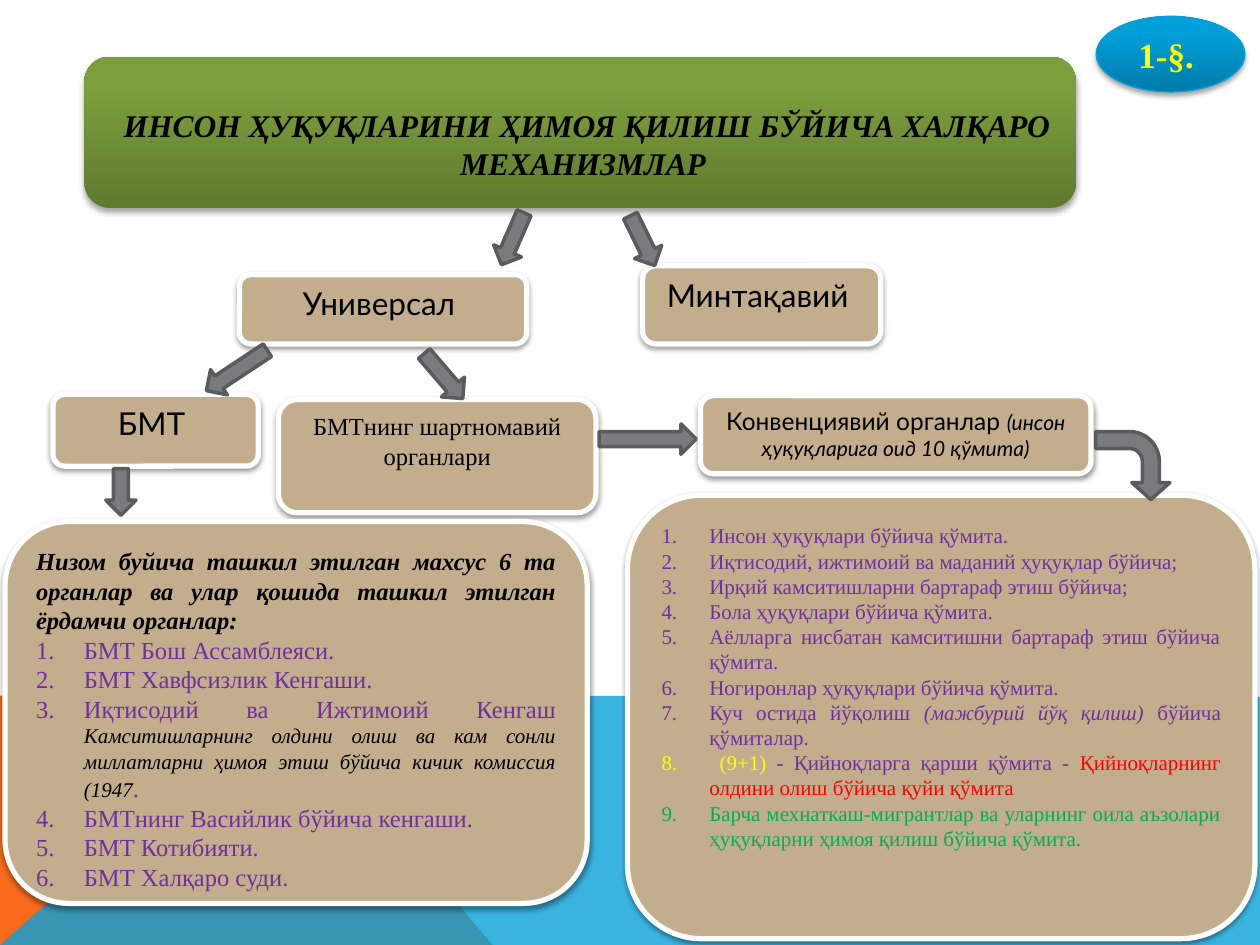
from copy import deepcopy

from lxml.etree import SubElement
from pptx import Presentation
from pptx.dml.color import RGBColor
from pptx.enum.shapes import MSO_SHAPE
from pptx.enum.text import MSO_ANCHOR, PP_ALIGN
from pptx.oxml.ns import qn
from pptx.util import Inches, Pt

SERIF, SANS = "Times New Roman", "Lato"
BLACK, WHITE, PURPLE, YELLOW = "000000", "FFFFFF", "7030A0", "FFFF00"
TAN, GREY, DARK_GREY = "C2AD8D", "797B7E", "5A5B5D"


def rgb(value):
    return RGBColor.from_string(value)


def run(text, size=14, font=SERIF, color=BLACK, bold=False, italic=False):
    """Describe one stretch of text with its formatting."""
    return text, size, font, color, bold, italic


class Diagram:
    def __init__(self, slide):
        self.slide = slide

    def add_text(self, shape, paragraphs, align=PP_ALIGN.CENTER, anchor=MSO_ANCHOR.TOP, numbered_from=None):
        """Fill a shape with lists of runs; paragraphs from numbered_from on are numbered."""
        frame = shape.text_frame
        frame.word_wrap = True
        frame.vertical_anchor = anchor
        for index, runs in enumerate(paragraphs):
            paragraph = frame.paragraphs[0] if index == 0 else frame.add_paragraph()
            paragraph.alignment = align
            if numbered_from is not None and index >= numbered_from:
                properties = paragraph._p.get_or_add_pPr()
                properties.set("marL", str(Inches(0.38)))
                properties.set("indent", str(-Inches(0.38)))
                SubElement(properties, qn("a:buFont"), typeface="+mj-lt")
                SubElement(properties, qn("a:buAutoNum"), type="arabicPeriod")
            for text, size, font, color, bold, italic in runs:
                piece = paragraph.add_run()
                piece.text = text
                piece.font.size, piece.font.name = Pt(size), font
                piece.font.bold, piece.font.italic = bold, italic
                piece.font.color.rgb = rgb(color)

    def paint(self, shape, fill, line=None, width=1):
        shape.fill.solid()
        shape.fill.fore_color.rgb = rgb(fill)
        self.outline(shape, line, width)

    def outline(self, shape, line, width):
        if line:
            shape.line.color.rgb = rgb(line)
            shape.line.width = Pt(width)
        else:
            shape.line.fill.background()
        shape.shadow.inherit = False

    def paint_gradient(self, shape, colors, line=None, width=1):
        shape.fill.gradient()
        shape.fill.gradient_angle = 90
        stop_list = shape._element.spPr.find(".//" + qn("a:gsLst"))
        stop_list.append(deepcopy(stop_list[-1]))
        for stop, color, position in zip(shape.fill.gradient_stops, colors, (0, 0.8, 1)):
            stop.color.rgb = rgb(color)
            stop.position = position
        self.outline(shape, line, width)

    def drop_shadow(self, shape, opacity, distance):
        effects = shape._element.spPr.find(qn("a:effectLst"))
        shadow = SubElement(effects, qn("a:outerShdw"), blurRad=str(Pt(3.1)),
                            dist=str(Pt(distance)), dir="5400000", rotWithShape="0")
        color = SubElement(shadow, qn("a:srgbClr"), val=BLACK)
        SubElement(color, qn("a:alpha"), val=str(opacity * 1000))

    def shape(self, preset, box):
        return self.slide.shapes.add_shape(preset, *map(Inches, box))

    def glossy(self, preset, box, colors, line=None):
        shape = self.shape(preset, box)
        self.paint_gradient(shape, colors, line, 0.75)
        self.drop_shadow(shape, 35, 1.8)
        return shape

    def card(self, box, paragraphs, **layout):
        card = self.shape(MSO_SHAPE.ROUNDED_RECTANGLE, box)
        self.paint(card, TAN, WHITE, 3)
        self.drop_shadow(card, 38, 1.6)
        self.add_text(card, paragraphs, **layout)

    def label(self, box, paragraphs):
        self.add_text(self.slide.shapes.add_textbox(*map(Inches, box)), paragraphs)

    def arrow(self, box, rotation=0, preset=MSO_SHAPE.DOWN_ARROW, adjustments=()):
        arrow = self.shape(preset, box)
        arrow.rotation = rotation
        for index, value in enumerate(adjustments):
            arrow.adjustments[index] = value
        self.paint(arrow, GREY, DARK_GREY, 2)

    def band(self, points, color, opacity=100):
        corners = [(Inches(x), Inches(y)) for x, y in points]
        builder = self.slide.shapes.build_freeform(*corners[0])
        builder.add_line_segments(corners[1:], close=True)
        band = builder.convert_to_shape()
        self.paint(band, color)
        if opacity < 100:
            fill_color = band._element.spPr.find(".//" + qn("a:srgbClr"))
            SubElement(fill_color, qn("a:alpha"), val=str(opacity * 1000))


def main():
    presentation = Presentation()
    presentation.slide_width, presentation.slide_height = Inches(10), Inches(7.5)
    diagram = Diagram(presentation.slides.add_slide(presentation.slide_layouts[6]))

    diagram.band([(0, 7.5), (0, 5.52), (2.23, 5.52), (3.91, 7.5)], "F96A1B")
    diagram.band([(0, 7.5), (2.23, 5.52), (10, 5.53), (10, 7.5)], "08A1D9", 80)

    section = diagram.glossy(MSO_SHAPE.OVAL, (8.7, 0.13, 1.18, 0.6),
                             ("007BA8", "00A0DA", "00A0DB"), "03A0D9")
    diagram.add_text(section, [[run("1-§. ", 20, color=YELLOW, bold=True)]], anchor=MSO_ANCHOR.MIDDLE)
    diagram.glossy(MSO_SHAPE.ROUNDED_RECTANGLE, (0.67, 0.45, 7.87, 1.2),
                   ("5F7A2E", "7B9F3C", "7CA13B"))
    diagram.label((0.84, 0.79, 7.64, 0.71), [[run(
        "ИНСОН ҲУҚУҚЛАРИНИ ҲИМОЯ ҚИЛИШ БЎЙИЧА ХАЛҚАРО МЕХАНИЗМЛАР ",
        18, bold=True, italic=True)]])

    for box, name in (((1.9, 2.18, 2.28, 0.55), "Универсал "),
                      ((5.1, 2.11, 1.89, 0.62), "Минтақавий "),
                      ((0.42, 3.13, 1.63, 0.57), "БМТ ")):
        diagram.card(box, [[run(name, 18, SANS)]])
    diagram.card((2.21, 3.17, 2.52, 0.9), [[run("БМТнинг шартномавий органлари")]])
    diagram.card((5.56, 3.14, 3.1, 0.62), [[
        run("Конвенциявий органлар ", 14, SANS),
        run("(инсон ҳуқуқларига оид 10 қўмита)", 12, SANS, italic=True)]])

    un_bodies = [[run(text, color=PURPLE)] for text in (
        "БМТ Бош Ассамблеяси.", "БМТ Хавфсизлик Кенгаши.", "Иқтисодий ва Ижтимоий Кенгаш ",
        "БМТнинг Васийлик бўйича кенгаши.", "БМТ Котибияти.", "БМТ Халқаро суди. ")]
    un_bodies[2] += [
        run("Камситишларнинг олдини олиш ва кам сонли миллатларни ҳимоя этиш бўйича "
            "кичик комиссия (1947", 12, italic=True),
        run(".", color=PURPLE)]
    heading = [run("Низом буйича ташкил этилган махсус 6 та органлар ва улар қошида "
                   "ташкил этилган ёрдамчи органлар: ", bold=True, italic=True)]
    diagram.card((0.04, 4.14, 4.62, 3.03), [heading, *un_bodies],
                 align=PP_ALIGN.JUSTIFY, numbered_from=1)

    committees = [[run(text, 12, color=PURPLE)] for text in (
        "Инсон ҳуқуқлари бўйича қўмита.",
        "Иқтисодий, ижтимоий ва маданий ҳуқуқлар бўйича;",
        "Ирқий камситишларни бартараф этиш бўйича;",
        "Бола ҳуқуқлари бўйича қўмита.",
        "Аёлларга нисбатан камситишни бартараф этиш бўйича қўмита.",
        "Ногиронлар ҳуқуқлари бўйича қўмита.",
        "Куч остида йўқолиш ")]
    committees[-1] += [run("(мажбурий йўқ қилиш) ", 12, color=PURPLE, italic=True),
                       run("бўйича қўмиталар.", 12, color=PURPLE)]
    committees += [
        [run(" (9+1) ", 12, color=YELLOW),
         run("- Қийноқларга қарши қўмита - ", 12, color=PURPLE),
         run("Қийноқларнинг олдини олиш бўйича қуйи қўмита", 12, color="FF0000")],
        [run("Барча мехнаткаш-мигрантлар ва уларнинг оила аъзолари ҳуқуқларни "
             "ҳимоя қилиш бўйича қўмита.", 12, color="00B050")]]
    diagram.card((4.98, 3.93, 4.98, 3.52), committees, align=PP_ALIGN.JUSTIFY, numbered_from=0)

    for left, top, length, rotation in (
            (3.95, 1.67, 0.45, 23.6), (4.98, 1.69, 0.44, 333.9), (1.76, 2.65, 0.58, 56.5),
            (3.4, 2.75, 0.47, 319.3), (0.84, 3.72, 0.37, 0), (5.02, 3.1, 0.77, 270)):
        diagram.arrow((left, top, 0.24, length), rotation)
    diagram.arrow((8.72, 3.4, 0.54, 0.59), 90, MSO_SHAPE.BENT_ARROW, (0.25, 0.28, 0.25, 0.44))

    presentation.save("out.pptx")


if __name__ == "__main__":
    main()
